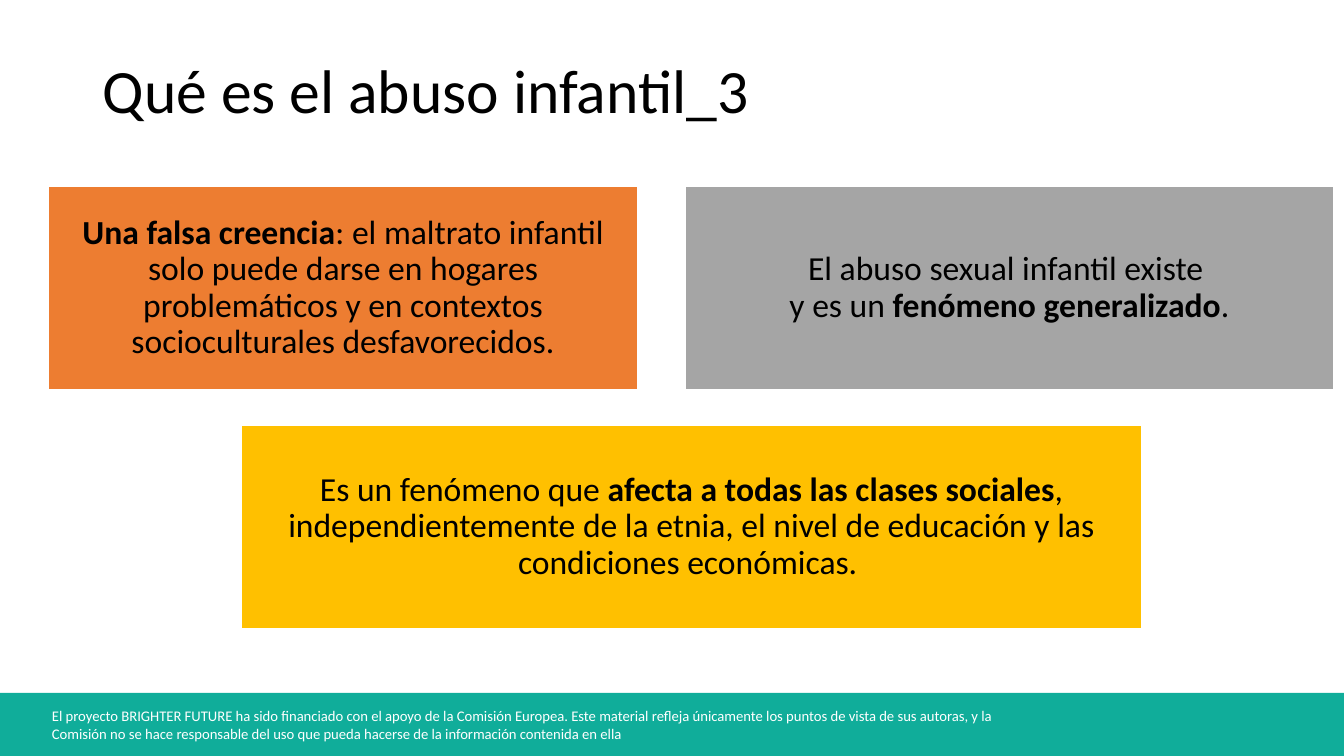
import pptx
import pptx.util
import pptx.dml.color
import pptx.enum.shapes
import pptx.enum.text
from dataclasses import dataclass

SCALE = 12192000 / 1344  # EMU in one px
ALIGN = pptx.enum.text.PP_ALIGN
ANCHOR = pptx.enum.text.MSO_ANCHOR


@dataclass(frozen=True)
class Theme:
    font: str = "Calibri"
    ink: str = "000000"
    paper: str = "FFFFFF"
    band: str = "10AD9A"
    orange: str = "ED7D31"
    gray: str = "A5A5A5"
    gold: str = "FFC000"
    title: float = 44
    body: float = 24
    note: float = 10.5


THEME = Theme()

# Left, top, width, height, fill and text of each card
CARDS = [
    (48, 186, 590, 204, THEME.orange,
     "**Una falsa creencia**: el maltrato infantil solo puede darse en hogares "
     "problemáticos y en contextos socioculturales desfavorecidos."),
    (685, 186, 649, 204, THEME.gray,
     "El abuso sexual infantil existe \ny es un **fenómeno generalizado**."),
    (241, 425, 901, 204, THEME.gold,
     "Es un fenómeno que **afecta a todas las clases sociales**, "
     "independientemente de la etnia, el nivel de educación y las "
     "condiciones económicas. "),
]

NOTE = ("El proyecto BRIGHTER FUTURE ha sido financiado con el apoyo de la "
        "Comisión Europea. Este material refleja únicamente los puntos de vista "
        "de sus autoras, y la Comisión no se hace responsable del uso que pueda "
        "hacerse de la información contenida en ella")


def px(*nums):
    return [pptx.util.Emu(round(num * SCALE)) for num in nums]


def color(code):
    return pptx.dml.color.RGBColor.from_string(code)


def write(shape, text, size, ink=THEME.ink, align=ALIGN.LEFT,
          anchor=ANCHOR.MIDDLE, inset=(10, 5), space=0.9):
    """Fill a shape with text; ** toggles bold and a newline breaks the line."""
    frame = shape.text_frame
    frame.word_wrap = True
    frame.auto_size = pptx.enum.text.MSO_AUTO_SIZE.NONE
    frame.vertical_anchor = anchor
    side, edge = px(*inset)
    frame.margin_left = frame.margin_right = side
    frame.margin_top = frame.margin_bottom = edge
    para = frame.paragraphs[0]
    para.alignment = align
    para.line_spacing = space
    bold = False
    for row, line in enumerate(text.split("\n")):
        if row:
            para.add_line_break()
        for turn, part in enumerate(line.split("**")):
            if turn:
                bold = not bold
            if part:
                run = para.add_run()
                run.text = part
                run.font.name = THEME.font
                run.font.size = pptx.util.Pt(size)
                run.font.bold = bold
                run.font.color.rgb = color(ink)


def add_box(slide, place, fill, edge=None):
    kind = pptx.enum.shapes.MSO_SHAPE.RECTANGLE
    box = slide.shapes.add_shape(kind, *px(*place))
    box.shadow.inherit = False
    box.fill.solid()
    box.fill.fore_color.rgb = color(fill)
    if edge:
        box.line.color.rgb = color(edge)
        box.line.width = pptx.util.Pt(1)
    else:
        box.line.fill.background()
    return box


def add_title(slide, text, place):
    title = slide.shapes.title
    title.left, title.top, title.width, title.height = px(*place)
    write(title, text, THEME.title)


def add_foot(slide):
    add_box(slide, (0, 693, 1344, 63), THEME.band)
    note = slide.shapes.add_textbox(*px(42, 702, 1008, 45))
    write(note, NOTE, THEME.note, ink=THEME.paper, anchor=ANCHOR.TOP, space=1.0)


def main():
    deck = pptx.Presentation()
    deck.slide_width, deck.slide_height = px(1344, 756)
    slide = deck.slides.add_slide(deck.slide_layouts[5])
    add_foot(slide)
    for *place, fill, text in CARDS:
        card = add_box(slide, place, fill, edge=THEME.paper)
        write(card, text, THEME.body, align=ALIGN.CENTER, inset=(12, 12))
    add_title(slide, "Qué es el abuso infantil_3", (93, 36, 1159, 116))
    deck.save("out.pptx")


if __name__ == "__main__":
    main()
